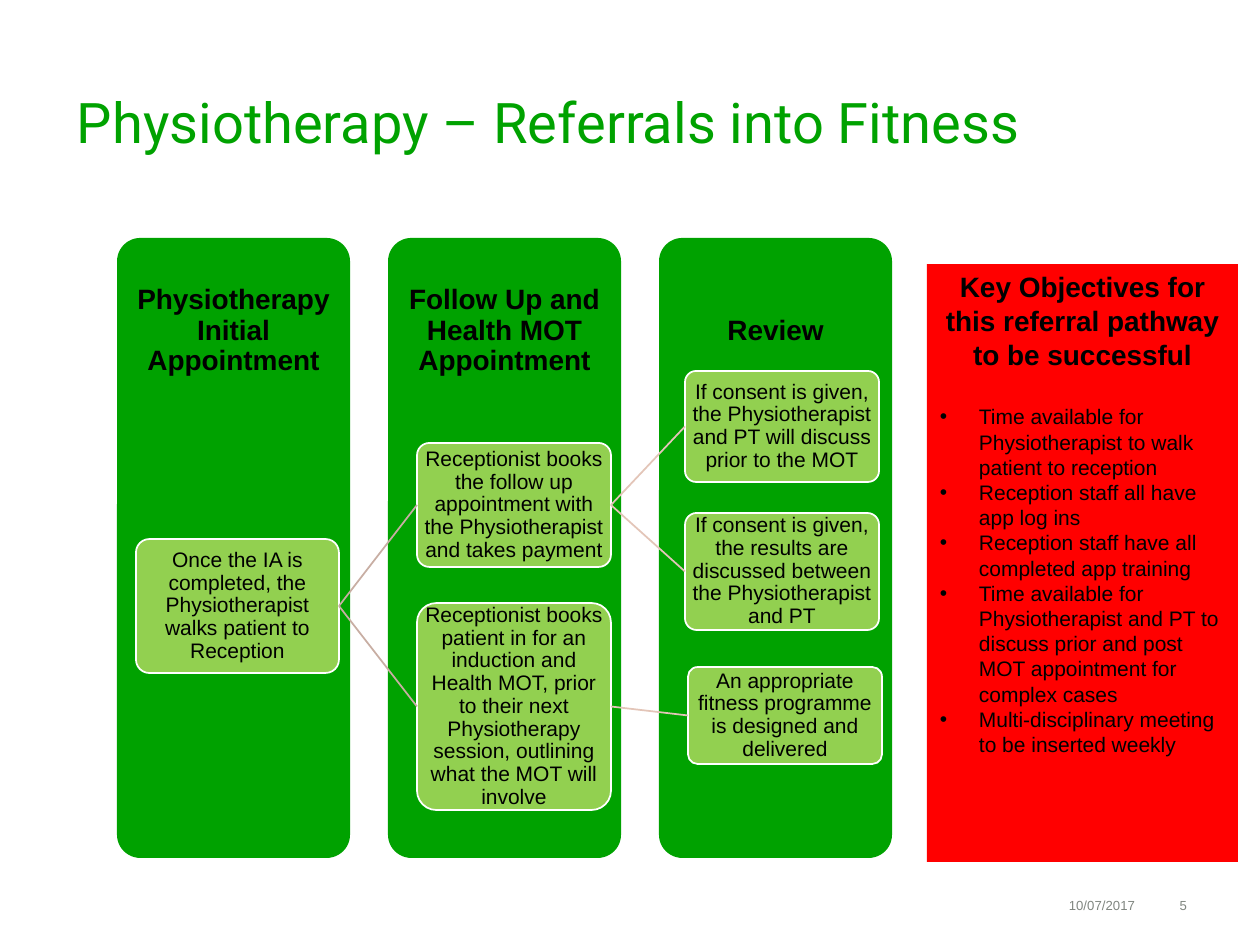
from pptx import Presentation
from pptx.dml.color import RGBColor
from pptx.enum.shapes import MSO_CONNECTOR, MSO_SHAPE
from pptx.enum.text import MSO_ANCHOR, PP_ALIGN
from pptx.oxml.ns import qn
from pptx.util import Pt
from lxml import etree

GREEN = RGBColor(0x00, 0xA2, 0x00)
LIGHT_GREEN = RGBColor(0x92, 0xD0, 0x50)
RED = RGBColor(0xFF, 0x00, 0x00)
WHITE = RGBColor(0xFF, 0xFF, 0xFF)
BLACK = RGBColor(0x00, 0x00, 0x00)
GREY = RGBColor(0x80, 0x86, 0x80)
BROWN = RGBColor(0xC8, 0xAE, 0xA3)
PINK = RGBColor(0xE3, 0xC5, 0xB8)
ROUNDED, RECTANGLE = MSO_SHAPE.ROUNDED_RECTANGLE, MSO_SHAPE.RECTANGLE
STRAIGHT = MSO_CONNECTOR.STRAIGHT
TOP, MIDDLE = MSO_ANCHOR.TOP, MSO_ANCHOR.MIDDLE
LEFT, CENTER, RIGHT = PP_ALIGN.LEFT, PP_ALIGN.CENTER, PP_ALIGN.RIGHT
LEFT_SITE, RIGHT_SITE = 1, 3

COLUMN_LEFT, COLUMN_TOP, COLUMN_STEP = 117, 238, 271
COLUMN_WIDTH, COLUMN_HEIGHT, HEADING_HEIGHT = 233, 620, 186
INDENT = 39

COLUMNS = [
    ("Physiotherapy Initial Appointment", [
        ((19, 301, 203, 134), "Once the IA is completed, the Physiotherapist walks patient to Reception"),
    ]),
    ("Follow Up and Health MOT Appointment", [
        ((29, 205, 194, 124), "Receptionist books the follow up appointment with the Physiotherapist and takes payment"),
        ((29, 365, 194, 207), "Receptionist books patient in for an induction and Health MOT, prior to their next "
                              "Physiotherapy session, outlining what the MOT will involve"),
    ]),
    ("Review", [
        ((26, 133, 194, 111), "If consent is given, the Physiotherapist and PT will discuss prior to the MOT"),
        ((26, 275, 194, 117), "If consent is given, the results are discussed between the Physiotherapist and PT"),
        ((29, 429, 194, 97), "An appropriate fitness programme is designed and delivered"),
    ]),
]
LINKS = [
    ((0, 0), (1, 0), BROWN),
    ((0, 0), (1, 1), BROWN),
    ((1, 0), (2, 0), PINK),
    ((1, 0), (2, 1), PINK),
    ((1, 1), (2, 2), PINK),
]
OBJECTIVES_HEADING = "Key Objectives for this referral pathway to be successful"
OBJECTIVES = [
    "Time available for Physiotherapist to walk patient to reception",
    "Reception staff all have app log ins",
    "Reception staff have all completed app training",
    "Time available for Physiotherapist and PT to discuss prior and post MOT appointment for complex cases",
    "Multi-disciplinary meeting to be inserted weekly",
]


def px(length):
    return round(length * 914400 / 126)


def set_frame(shape, anchor, inset_x, inset_y):
    frame = shape.text_frame
    frame.word_wrap = True
    frame.vertical_anchor = anchor
    frame.margin_left = frame.margin_right = px(inset_x)
    frame.margin_top = frame.margin_bottom = px(inset_y)
    return frame


def format_paragraph(paragraph, size, color, align, font="Arial", bold=False, spacing=None):
    paragraph.alignment = align
    if spacing:
        paragraph.line_spacing = spacing
    for run in paragraph.runs:
        run.font.name = font
        run.font.size = Pt(size)
        run.font.bold = bold
        run.font.color.rgb = color


def add_text(slide, box, text, size, color, align, anchor=TOP, inset=0, **style):
    shape = slide.shapes.add_textbox(*map(px, box))
    frame = set_frame(shape, anchor, inset, inset)
    frame.text = text
    format_paragraph(frame.paragraphs[0], size, color, align, **style)


def add_panel(slide, kind, box, fill, line=None):
    shape = slide.shapes.add_shape(kind, *map(px, box))
    shape.shadow.inherit = False
    shape.fill.solid()
    shape.fill.fore_color.rgb = fill
    if line is None:
        shape.line.fill.background()
    else:
        shape.line.color.rgb = line
        shape.line.width = Pt(1)
    if kind == ROUNDED:
        shape.adjustments[0] = 0.1
    return shape


def add_card(slide, box, text):
    card = add_panel(slide, ROUNDED, box, LIGHT_GREEN, WHITE)
    frame = set_frame(card, MIDDLE, 1, 1)
    frame.text = text
    format_paragraph(frame.paragraphs[0], 12, BLACK, CENTER, spacing=0.9)
    return card


def add_column(slide, box, heading, cards):
    left, top, width, height = box
    add_panel(slide, ROUNDED, box, GREEN)
    add_text(slide, (left, top, width, HEADING_HEIGHT), heading, 16, BLACK, CENTER,
             anchor=MIDDLE, inset=15, bold=True, spacing=0.9)
    return [add_card(slide, (left + x, top + y, card_width, card_height), text)
            for (x, y, card_width, card_height), text in cards]


def add_link(slide, source, target, color):
    connector = slide.shapes.add_connector(STRAIGHT, 0, 0, 0, 0)
    connector.begin_connect(source, RIGHT_SITE)
    connector.end_connect(target, LEFT_SITE)
    connector.line.color.rgb = color
    connector.line.width = Pt(1)
    properties = connector.element.find(qn("p:spPr"))
    etree.SubElement(properties, qn("a:effectLst"))


def add_pathway(slide):
    cards = [
        add_column(slide, (COLUMN_LEFT + index * COLUMN_STEP, COLUMN_TOP, COLUMN_WIDTH, COLUMN_HEIGHT),
                   heading, column_cards)
        for index, (heading, column_cards) in enumerate(COLUMNS)
    ]
    for (source_column, source), (target_column, target), color in LINKS:
        add_link(slide, cards[source_column][source], cards[target_column][target], color)


def add_bullet(paragraph):
    properties = paragraph._p.get_or_add_pPr()
    properties.set("marL", str(px(INDENT)))
    properties.set("indent", str(-px(INDENT)))
    etree.SubElement(properties, qn("a:buFont")).set("typeface", "Arial")
    etree.SubElement(properties, qn("a:buChar")).set("char", "•")


def add_objectives(slide, box):
    frame = set_frame(add_panel(slide, RECTANGLE, box, RED), TOP, 13, 6)
    frame.text = OBJECTIVES_HEADING
    heading = frame.paragraphs[0]
    format_paragraph(heading, 16, BLACK, CENTER, bold=True)
    heading.space_after = Pt(19)
    for objective in OBJECTIVES:
        paragraph = frame.add_paragraph()
        paragraph.text = objective
        add_bullet(paragraph)
        format_paragraph(paragraph, 12, BLACK, LEFT)


def main():
    presentation = Presentation()
    presentation.slide_width = px(1260)
    presentation.slide_height = px(945)
    slide = presentation.slides.add_slide(presentation.slide_layouts[6])
    add_text(slide, (77, 92, 1106, 121), "Physiotherapy – Referrals into Fitness", 32, GREEN, LEFT,
             font="Roboto", spacing=Pt(36))
    add_text(slide, (1063, 897, 72, 30), "10/07/2017", 7.5, GREY, RIGHT)
    add_text(slide, (1143, 897, 44, 30), "5", 7.5, GREY, RIGHT)
    add_pathway(slide)
    add_objectives(slide, (927, 264, 311, 598))
    presentation.save("out.pptx")


if __name__ == "__main__":
    main()
